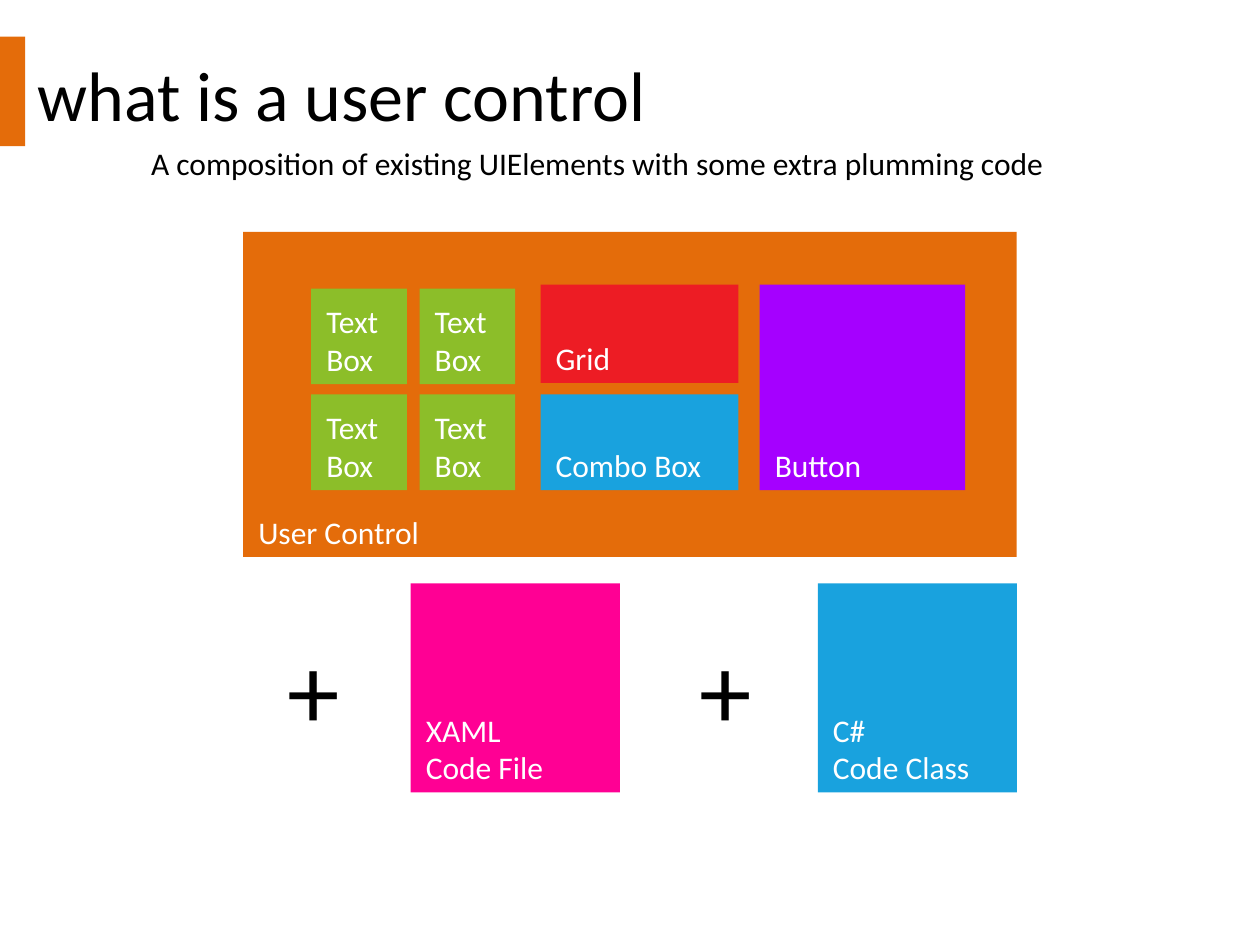
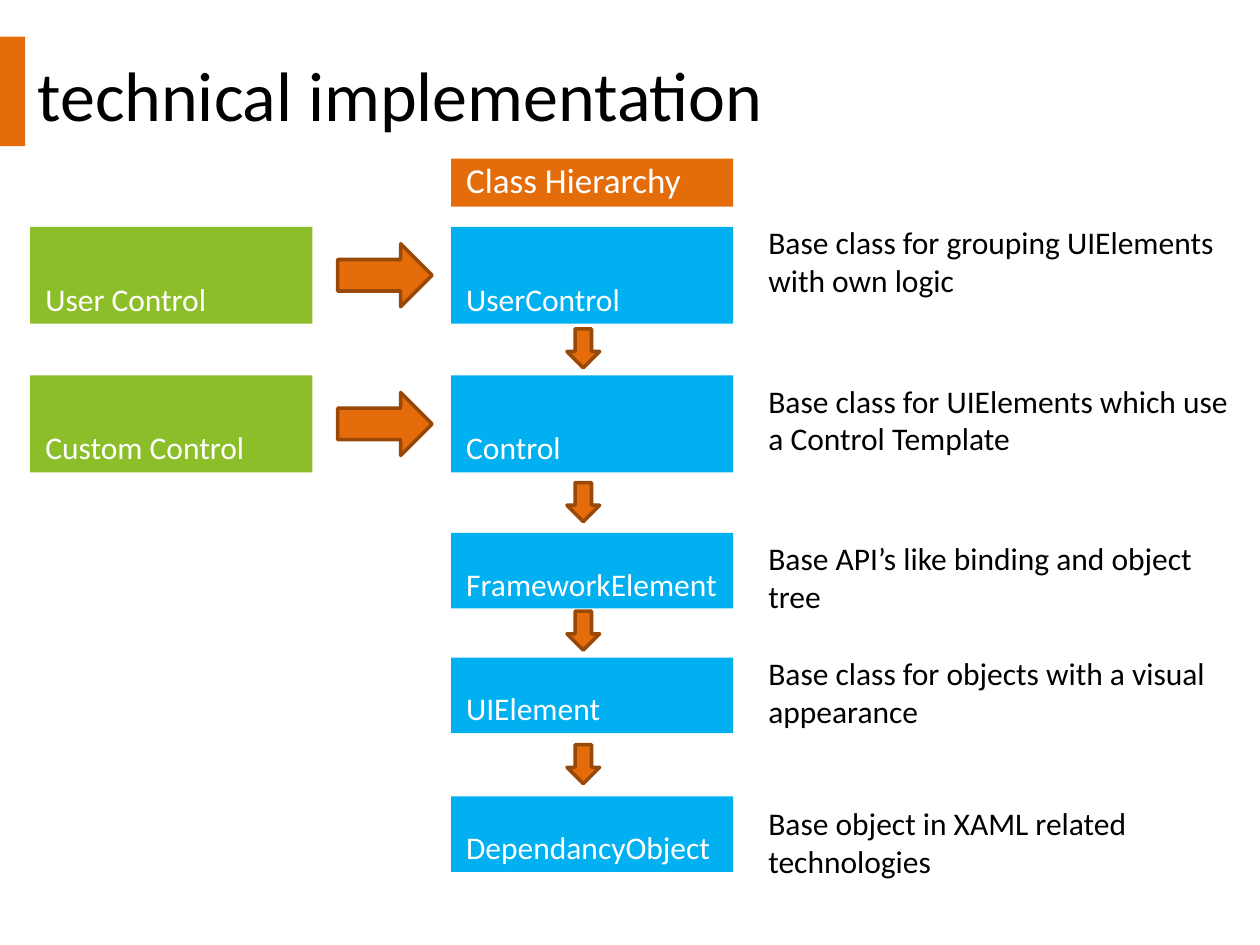
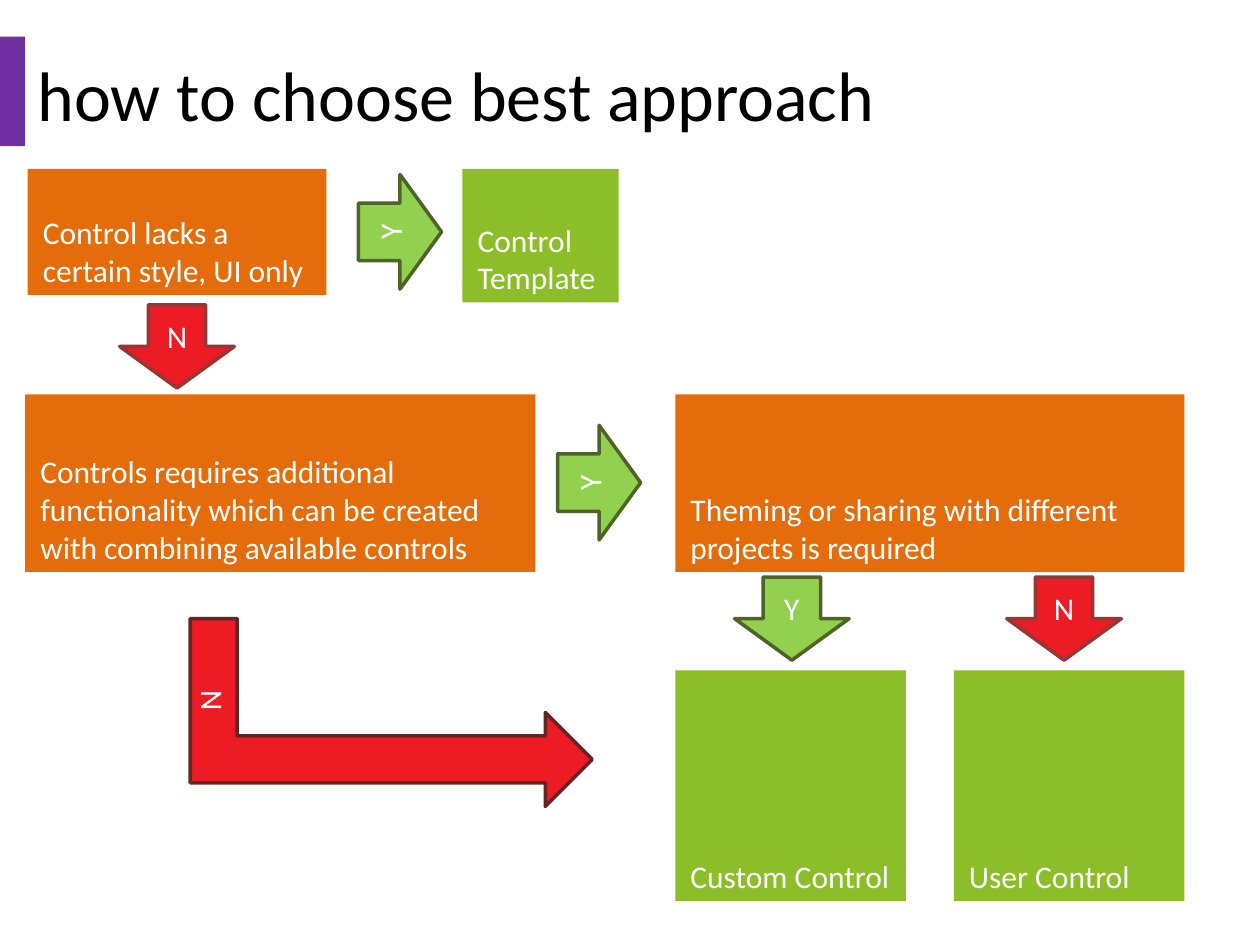
"""Build three slides on user controls, their class hierarchy and how to choose one."""
from pptx import Presentation
from pptx.dml.color import RGBColor
from pptx.enum.shapes import MSO_SHAPE
from pptx.enum.text import MSO_ANCHOR, MSO_AUTO_SIZE, PP_ALIGN
from pptx.util import Inches, Pt

FONT = "Calibri"
COLORS = {
    "orange": "E46C0A",
    "brown": "984807",
    "lime": "8CBE29",
    "sky": "19A2DE",
    "azure": "00B0F0",
    "violet": "A500FF",
    "purple": "7030A0",
    "magenta": "FF0094",
    "red": "ED1C24",
    "dark red": "953735",
    "maroon": "632523",
    "green": "92D050",
    "dark green": "4F6228",
    "white": "FFFFFF",
    "black": "000000",
}
ANSWERS = {"Y": ("green", "dark green"), "N": ("red", "dark red")}


def color(name):
    """Return the palette colour with this name."""
    return RGBColor.from_string(COLORS[name])


def write(shape, text, size, ink, anchor, align=PP_ALIGN.LEFT):
    """Fill a shape with wrapped text, one paragraph for each line."""
    frame = shape.text_frame
    frame.word_wrap = True
    frame.vertical_anchor = anchor
    frame.text = text
    for paragraph in frame.paragraphs:
        paragraph.alignment = align
        paragraph.font.name = FONT
        paragraph.font.size = Pt(size)
        paragraph.font.color.rgb = color(ink)


def add_figure(slide, kind, left, top, width, height, fill, outline=None):
    """Add a flat preset shape, with an outline if a colour is given."""
    shape = slide.shapes.add_shape(
        kind, Inches(left), Inches(top), Inches(width), Inches(height))
    shape.shadow.inherit = False
    shape.fill.solid()
    shape.fill.fore_color.rgb = color(fill)
    if outline:
        shape.line.color.rgb = color(outline)
        shape.line.width = Pt(2)
    else:
        shape.line.fill.background()
    return shape


def add_tile(slide, text, left, top, width, height, fill, size=18):
    """Add a coloured tile with its label at the bottom left."""
    tile = add_figure(slide, MSO_SHAPE.RECTANGLE, left, top, width, height, fill)
    write(tile, text, size, "white", MSO_ANCHOR.BOTTOM)
    frame = tile.text_frame
    frame.margin_left, frame.margin_top = Inches(0.12), Inches(0.04)
    frame.margin_right, frame.margin_bottom = Inches(0.1), Inches(0.05)


def add_text(slide, text, left, top, width, height, size=18,
             anchor=MSO_ANCHOR.TOP, grow=True):
    """Add a black text box."""
    box = slide.shapes.add_textbox(
        Inches(left), Inches(top), Inches(width), Inches(height))
    write(box, text, size, "black", anchor)
    box.text_frame.auto_size = (
        MSO_AUTO_SIZE.SHAPE_TO_FIT_TEXT if grow else MSO_AUTO_SIZE.NONE)


def add_answer(slide, answer, left, top, rotation=0):
    """Add a yes or no arrow of the decision tree."""
    arrow = add_figure(
        slide, MSO_SHAPE.DOWN_ARROW, left, top, 0.91, 0.66, *ANSWERS[answer])
    arrow.rotation = rotation
    write(arrow, answer, 18, "white", MSO_ANCHOR.MIDDLE, PP_ALIGN.CENTER)


def add_titled_slide(presentation, title, band="orange"):
    """Add a blank slide with a title and a band at its left."""
    slide = presentation.slides.add_slide(presentation.slide_layouts[6])
    add_text(slide, title, 0.2, 0.36, 9, 0.71, size=40, grow=False)
    add_figure(slide, MSO_SHAPE.RECTANGLE, 0, 0.29, 0.2, 0.87, band)
    return slide


def build_definition(presentation):
    """Show the parts that make up a user control."""
    slide = add_titled_slide(presentation, "what is a user control")
    add_text(slide, "A composition of existing UIElements with some extra plumming code",
             1.1, 1.09, 8.22, 0.4)
    add_tile(slide, "User Control", 1.93, 1.84, 6.14, 2.58, "orange")
    add_tile(slide, "Button", 6.03, 2.26, 1.63, 1.63, "violet")
    add_tile(slide, "Grid", 4.29, 2.26, 1.57, 0.78, "red")
    add_tile(slide, "Combo Box", 4.29, 3.13, 1.57, 0.76, "sky")
    for left in (2.47, 3.33):
        for top in (2.29, 3.13):
            add_tile(slide, "Text Box", left, top, 0.76, 0.76, "lime")
    add_tile(slide, "XAML\nCode File", 3.26, 4.63, 1.66, 1.66, "magenta")
    add_tile(slide, "C#\nCode Class", 6.49, 4.63, 1.58, 1.66, "sky")
    for left in (2.18, 5.45):
        add_text(slide, "+", left, 4.9, 0.83, 1.11, size=60, anchor=MSO_ANCHOR.MIDDLE)


def build_hierarchy(presentation):
    """Show the chain of base classes and what each is for."""
    slide = add_titled_slide(presentation, "technical implementation")
    add_tile(slide, "Class Hierarchy", 3.58, 1.26, 2.24, 0.38, "orange", size=20)
    classes = [
        ("UserControl", 1.8, 0.77, "Base class for grouping UIElements with own logic", 1.72),
        ("Control", 2.98, 0.77, "Base class for UIElements which use a Control Template", 2.98),
        ("FrameworkElement", 4.23, 0.6, "Base API’s like binding and object tree", 4.23),
        ("UIElement", 5.22, 0.6, "Base class for objects with a visual appearance", 5.14),
        ("DependancyObject", 6.32, 0.6, "Base object in XAML related technologies", 6.33),
    ]
    for name, top, height, purpose, purpose_top in classes:
        add_tile(slide, name, 3.58, top, 2.24, height, "azure")
        add_text(slide, purpose, 6, purpose_top, 3.9, 0.71)
    for top in (2.61, 3.83, 4.85, 5.91):
        add_figure(slide, MSO_SHAPE.DOWN_ARROW, 4.5, top, 0.26, 0.31, "orange", "brown")
    for name, top in (("User Control", 1.8), ("Custom Control", 2.98)):
        add_tile(slide, name, 0.24, top, 2.24, 0.77, "lime")
        add_figure(slide, MSO_SHAPE.RIGHT_ARROW, 2.68, top + 0.135, 0.75, 0.5,
                   "orange", "brown")


def build_decision(presentation):
    """Show the decision tree for choosing an approach."""
    slide = add_titled_slide(presentation, "how to choose best approach", "purple")
    add_tile(slide, "Control lacks a certain style, UI only", 0.22, 1.34, 2.37, 1, "orange")
    add_tile(slide, "Controls requires additional functionality which can be created "
             "with combining available controls", 0.2, 3.13, 4.05, 1.41, "orange")
    add_tile(slide, "Theming or sharing with different projects is required",
             5.36, 3.13, 4.04, 1.41, "orange")
    add_tile(slide, "Control Template", 3.67, 1.34, 1.24, 1.06, "lime")
    add_tile(slide, "Custom Control", 5.36, 5.32, 1.83, 1.83, "lime")
    add_tile(slide, "User Control", 7.57, 5.32, 1.83, 1.83, "lime")
    add_answer(slide, "N", 0.95, 2.42)
    add_answer(slide, "Y", 2.72, 1.51, rotation=270)
    add_answer(slide, "Y", 4.3, 3.5, rotation=270)
    add_answer(slide, "Y", 5.83, 4.58)
    add_answer(slide, "N", 7.99, 4.58)
    detour = add_figure(slide, MSO_SHAPE.BENT_UP_ARROW, 2.36, 4.06, 1.49, 3.19,
                        "red", "maroon")
    detour.rotation = 90
    write(detour, "N", 18, "white", MSO_ANCHOR.MIDDLE, PP_ALIGN.CENTER)


def main():
    """Build and save the presentation."""
    presentation = Presentation()
    presentation.slide_width = Inches(10)
    presentation.slide_height = Inches(7.5)
    build_definition(presentation)
    build_hierarchy(presentation)
    build_decision(presentation)
    presentation.save("out.pptx")


if __name__ == "__main__":
    main()
